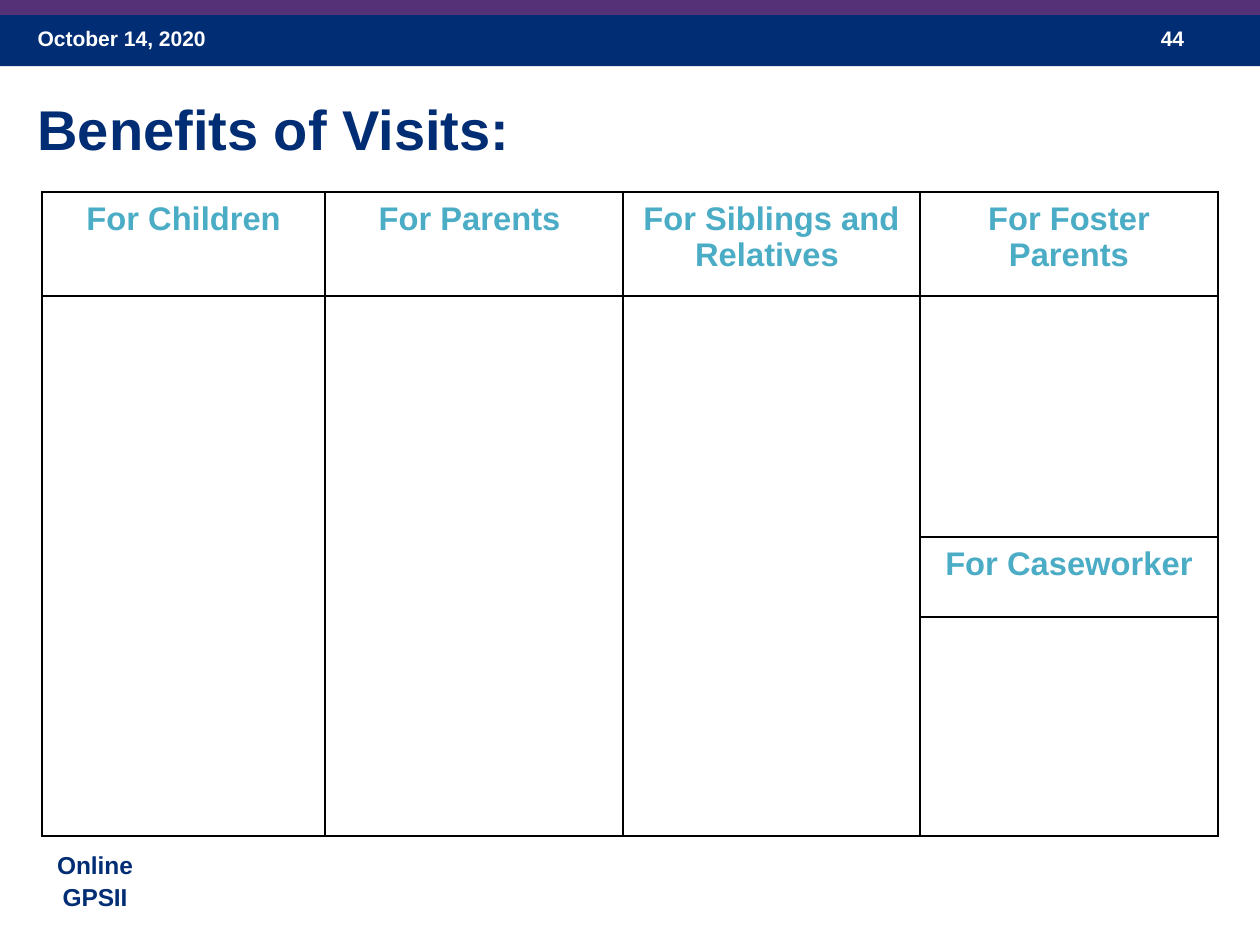
import dataclasses

import lxml.etree
import pptx
import pptx.dml.color
import pptx.enum.shapes
import pptx.enum.text
import pptx.oxml.ns
import pptx.util

Pt = pptx.util.Pt
RGB = pptx.dml.color.RGBColor
CENTER = pptx.enum.text.PP_ALIGN.CENTER
LEFT = pptx.enum.text.PP_ALIGN.LEFT


@dataclasses.dataclass(frozen=True)
class Theme:
    """Colours, font and type sizes of the slide."""
    navy: str = "002D73"
    purple: str = "553278"
    teal: str = "4BACC6"
    white: str = "FFFFFF"
    rule: str = "000000"
    font: str = "Arial"
    small: float = 9
    tag: float = 10.5
    head: float = 14
    title: float = 24


T = Theme()


def write(tf, lines, size, color, align=LEFT, spacing=1.0):
    """Fill a text frame with bold lines, one paragraph each."""
    for i, line in enumerate(lines):
        p = tf.paragraphs[0] if i == 0 else tf.add_paragraph()
        p.alignment, p.line_spacing = align, spacing
        r = p.add_run()
        r.text = line
        look = {"name": T.font, "size": Pt(size), "bold": True}
        for key, value in look.items():
            setattr(r.font, key, value)
        r.font.color.rgb = RGB.from_string(color)


def add_text(s, box, lines, *style, **options):
    """Add a wrapping text box."""
    tf = s.shapes.add_textbox(*map(Pt, box)).text_frame
    tf.word_wrap = True
    write(tf, lines, *style, **options)


def add_band(s, box, color):
    """Add a plain filled band."""
    sp = s.shapes.add_shape(pptx.enum.shapes.MSO_SHAPE.RECTANGLE, *map(Pt, box))
    sp.shadow.inherit = False
    sp.fill.solid()
    sp.fill.fore_color.rgb = RGB.from_string(color)
    sp.line.fill.background()


def add_header(s, box, date, number):
    """Draw the top bands with the date and the slide number."""
    x, y, w, h = box
    add_band(s, (x, y + 5, w, h - 5), T.navy)
    add_band(s, (x, y, w, 6.4), T.purple)
    add_text(s, (x + 9, y + 7.2, 126, 21.6), [date], T.small, T.white)
    add_text(s, (x + w - 49.6, y + 7.2, 40, 21.6), [number], T.small, T.white)


def format_cell(cell):
    """Give a cell thin black borders and no fill."""
    tcPr = cell._tc.get_or_add_tcPr()
    for side in ("lnL", "lnR", "lnT", "lnB"):
        ln = lxml.etree.SubElement(tcPr, pptx.oxml.ns.qn(f"a:{side}"), w=str(Pt(1)))
        fill = lxml.etree.SubElement(ln, pptx.oxml.ns.qn("a:solidFill"))
        lxml.etree.SubElement(fill, pptx.oxml.ns.qn("a:srgbClr"), val=T.rule)
    cell.fill.background()


def add_benefits(s, box, widths, heights, labels):
    """Draw the benefits table; all columns but the last are merged below the head."""
    rows, cols = len(heights), len(widths)
    table = s.shapes.add_table(rows, cols, *map(Pt, box)).table
    table.first_row = table.horz_banding = False
    for column, width in zip(table.columns, widths):
        column.width = Pt(width)
    for row, height in zip(table.rows, heights):
        row.height = Pt(height)
    for cell in table.iter_cells():
        format_cell(cell)
    for c in range(cols - 1):
        table.cell(1, c).merge(table.cell(rows - 1, c))
    for (r, c), label in labels.items():
        write(table.cell(r, c).text_frame, [label], T.head, T.teal, CENTER)


def main():
    """Build and save the slide."""
    prs = pptx.Presentation()
    prs.slide_width, prs.slide_height = Pt(540), Pt(405)
    s = prs.slides.add_slide(prs.slide_layouts[6])
    add_header(s, (0, 0, 540, 28.4), "October 14, 2020", "44")
    add_text(s, (9, 36.8, 513, 50), ["Benefits of Visits:"], T.title, T.navy)
    heads = ["For Children", "For Parents ", "For Siblings and Relatives ", "For Foster Parents"]
    labels = {(0, c): head for c, head in enumerate(heads)}
    labels[2, 3] = "For Caseworker"
    add_benefits(s, (18, 82.3, 504, 276.1), [121.5] + [127.5] * 3,
                 [44.6, 103.4, 34.2, 93.9], labels)
    add_text(s, (15.6, 360, 50.4, 28.8), ["Online", "GPSII"], T.tag, T.navy,
             align=CENTER, spacing=1.07)
    prs.save("out.pptx")


if __name__ == "__main__":
    main()
